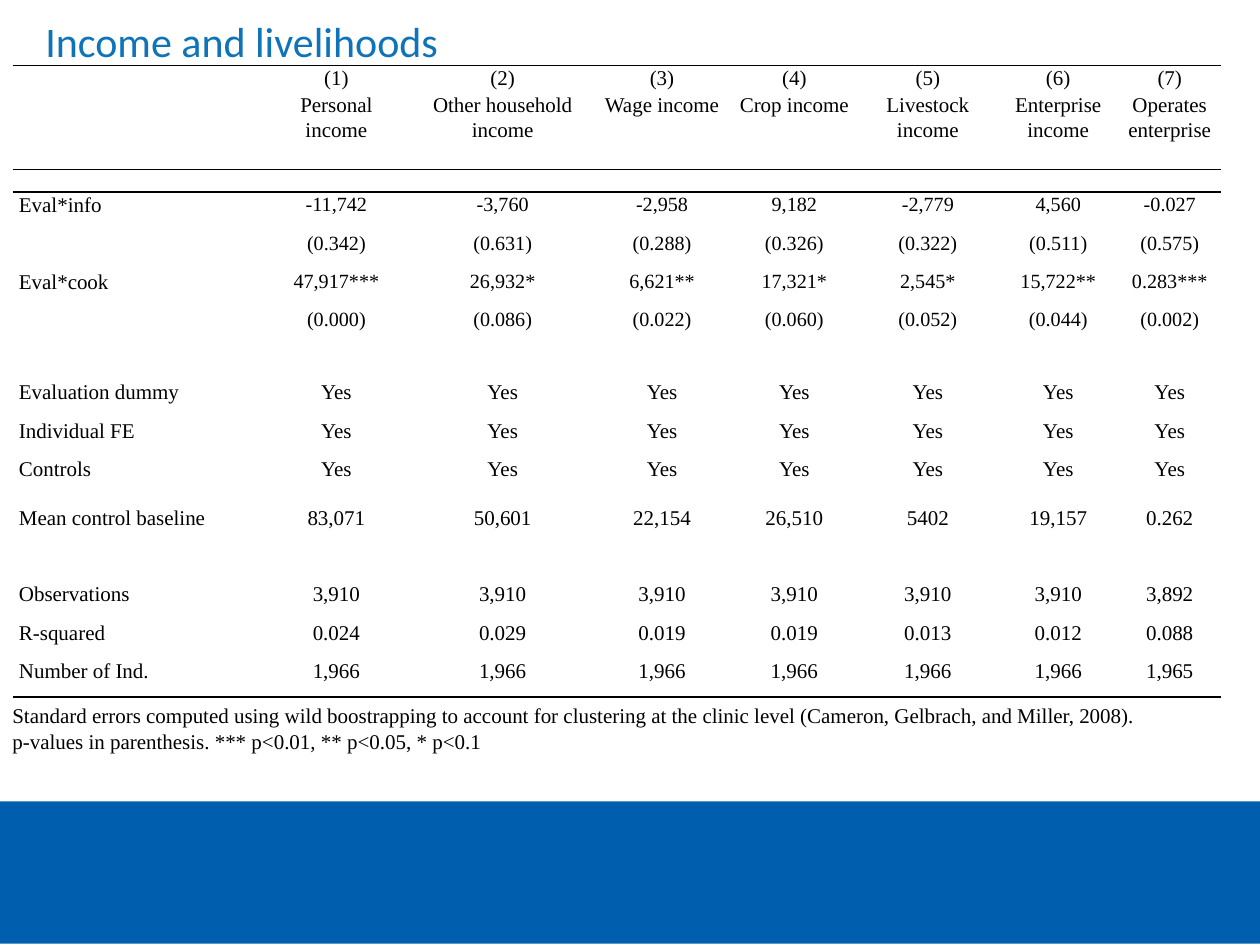
import pptx
import pptx.dml.color
import pptx.enum.shapes
import pptx.enum.text
import pptx.oxml
import pptx.oxml.ns
import pptx.util

SERIF = "Times New Roman"
LINE = 3.05
COLUMNS = [19.7, 12, 14.4, 10.9, 10.1, 11.1, 9.6, 8.1]
YES = ["Yes"] * 7
ROWS = [
    (2, ["", *(f"({n})" for n in range(1, 8))]),
    (6.1, ["", "Personal income", "Other household income", "Wage income", "Crop income",
           "Livestock income", "Enterprise income", "Operates enterprise"]),
    (1.8, [""] * 8),
    (LINE, ["Eval*info", "-11,742", "-3,760", "-2,958", "9,182", "-2,779", "4,560", "-0.027"]),
    (LINE, ["", "(0.342)", "(0.631)", "(0.288)", "(0.326)", "(0.322)", "(0.511)", "(0.575)"]),
    (LINE, ["Eval*cook", "47,917***", "26,932*", "6,621**", "17,321*", "2,545*", "15,722**",
            "0.283***"]),
    (2.7, ["", "(0.000)", "(0.086)", "(0.022)", "(0.060)", "(0.052)", "(0.044)", "(0.002)"]),
    (LINE, [""] * 8),
    (LINE, ["Evaluation dummy", *YES]),
    (LINE, ["Individual FE", *YES]),
    (LINE, ["Controls", *YES]),
    (0.8, [""] * 8),
    (LINE, ["Mean control baseline", "83,071", "50,601", "22,154", "26,510", "5402", "19,157",
            "0.262"]),
    (LINE, [""] * 8),
    (LINE, ["Observations", *["3,910"] * 6, "3,892"]),
    (LINE, ["R-squared", "0.024", "0.029", "0.019", "0.019", "0.013", "0.012", "0.088"]),
    (LINE, ["Number of Ind.", *["1,966"] * 6, "1,965"]),
]
RULES = {0: "lnT", 1: "lnB", 2: "lnT", 16: "lnB"}
ESTIMATE_ROWS = range(3, 7)


def rgb(value):
    """Turn a hex string into a colour."""
    return pptx.dml.color.RGBColor.from_string(value)


class Deck:
    """Draws on a slide divided into 100 columns and 75 rows."""

    def __init__(self):
        """Start a deck of 10 by 7.5 inches."""
        self.prs = pptx.Presentation()
        self.prs.slide_width = pptx.util.Inches(10)
        self.prs.slide_height = pptx.util.Inches(7.5)
        self.unit = self.prs.slide_width / 100
        self.s = None

    def grid(self, *cells):
        """Convert grid cells to slide lengths."""
        return [pptx.util.Emu(round(c * self.unit)) for c in cells]

    def add_slide(self):
        """Add a blank slide and make it current."""
        self.s = self.prs.slides.add_slide(self.prs.slide_layouts[6])

    def style(self, p, size, color="000000", font=SERIF):
        """Set the font of a whole paragraph."""
        p.font.size = pptx.util.Pt(size)
        p.font.name = font
        p.font.color.rgb = rgb(color)

    def band(self, box, color):
        """Draw a plain filled rectangle."""
        sp = self.s.shapes.add_shape(pptx.enum.shapes.MSO_SHAPE.RECTANGLE, *self.grid(*box))
        sp.shadow.inherit = False
        sp.fill.solid()
        sp.fill.fore_color.rgb = rgb(color)
        sp.line.fill.background()

    def text(self, box, lines, size, **look):
        """Add a wrapping text box with one paragraph a line."""
        tf = self.s.shapes.add_textbox(*self.grid(*box)).text_frame
        tf.word_wrap = True
        tf.text = "\n".join(lines)
        for p in tf.paragraphs:
            self.style(p, size, **look)
        return tf

    def title(self, box, line):
        """Add the heading, resting on the bottom of its box."""
        tf = self.text(box, [line], 24, color="0E73B9", font="Calibri")
        tf.vertical_anchor = pptx.enum.text.MSO_ANCHOR.BOTTOM
        tf.margin_left = tf.margin_right = tf.margin_top = tf.margin_bottom = 0

    def rule(self, cell, side):
        """Draw a thin black border on one side of a cell."""
        cell._tc.get_or_add_tcPr().insert(0, pptx.oxml.parse_xml(
            f'<a:{side} {pptx.oxml.ns.nsdecls("a")} w="12700"><a:solidFill>'
            f'<a:srgbClr val="000000"/></a:solidFill></a:{side}>'))

    def cell(self, cell, text, size, centred):
        """Fill one table cell, keeping empty ones from stretching their row."""
        cell.fill.background()
        cell.margin_left, cell.margin_right = self.grid(0.5, 0.5)
        cell.margin_top = cell.margin_bottom = 0
        p = cell.text_frame.paragraphs[0]
        if not text:
            p._p.append(pptx.oxml.parse_xml(
                f'<a:endParaRPr {pptx.oxml.ns.nsdecls("a")} sz="100"/>'))
            return
        p.text = text
        p.line_spacing = 1.07
        if centred:
            p.alignment = pptx.enum.text.PP_ALIGN.CENTER
        self.style(p, size)

    def table(self, left, top, columns, rows):
        """Add the regression table with its horizontal rules."""
        box = self.grid(left, top, sum(columns), sum(height for height, _ in rows))
        table = self.s.shapes.add_table(len(rows), len(columns), *box).table
        table.first_row = table.horz_banding = False
        style_id = table._tbl.tblPr.find(pptx.oxml.ns.qn("a:tableStyleId"))
        style_id.text = "{2D5ABB26-0587-4C30-8999-92F81FD0307C}"
        for column, width in zip(table.columns, self.grid(*columns)):
            column.width = width
        for i, (height, texts) in enumerate(rows):
            table.rows[i].height = self.grid(height)[0]
            for j, text in enumerate(texts):
                size = 11.5 if i in ESTIMATE_ROWS and j else 12
                self.cell(table.cell(i, j), text, size, centred=j > 0)
                if i in RULES:
                    self.rule(table.cell(i, j), RULES[i])


def main():
    """Build the slide and save it."""
    deck = Deck()
    deck.add_slide()
    deck.band((0, 63.6, 100, 11.3), "005EAE")
    deck.title((3.6, -0.9, 82, 6.1), "Income and livelihoods")
    deck.table(1, 5.2, COLUMNS, ROWS)
    deck.text((0, 55.3, 96.7, 5), [
        "Standard errors computed using wild boostrapping to account for clustering at the "
        "clinic level (Cameron, Gelbrach, and Miller, 2008).",
        "p-values in parenthesis. *** p<0.01, ** p<0.05, * p<0.1",
    ], 12)
    deck.prs.save("out.pptx")


if __name__ == "__main__":
    main()
